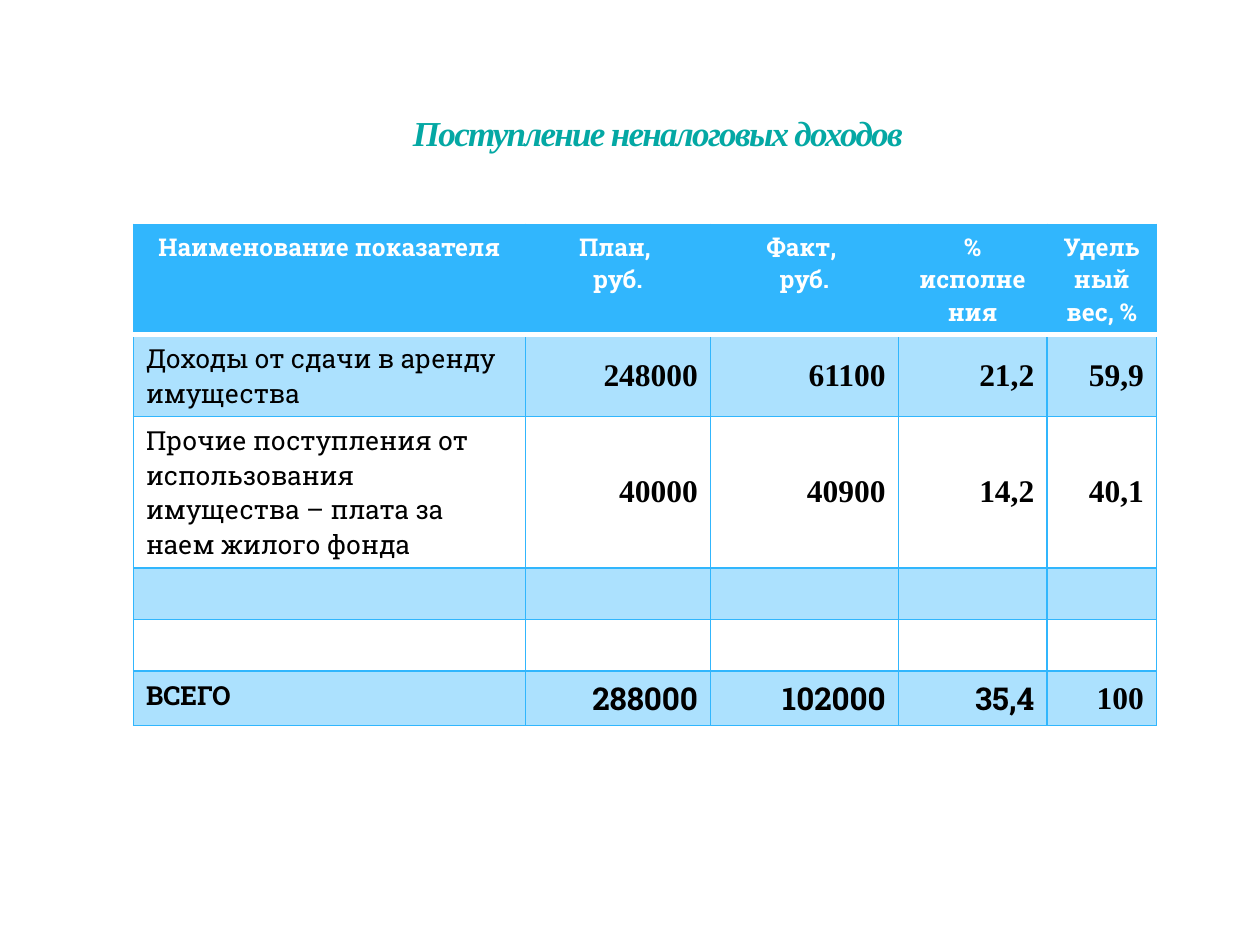
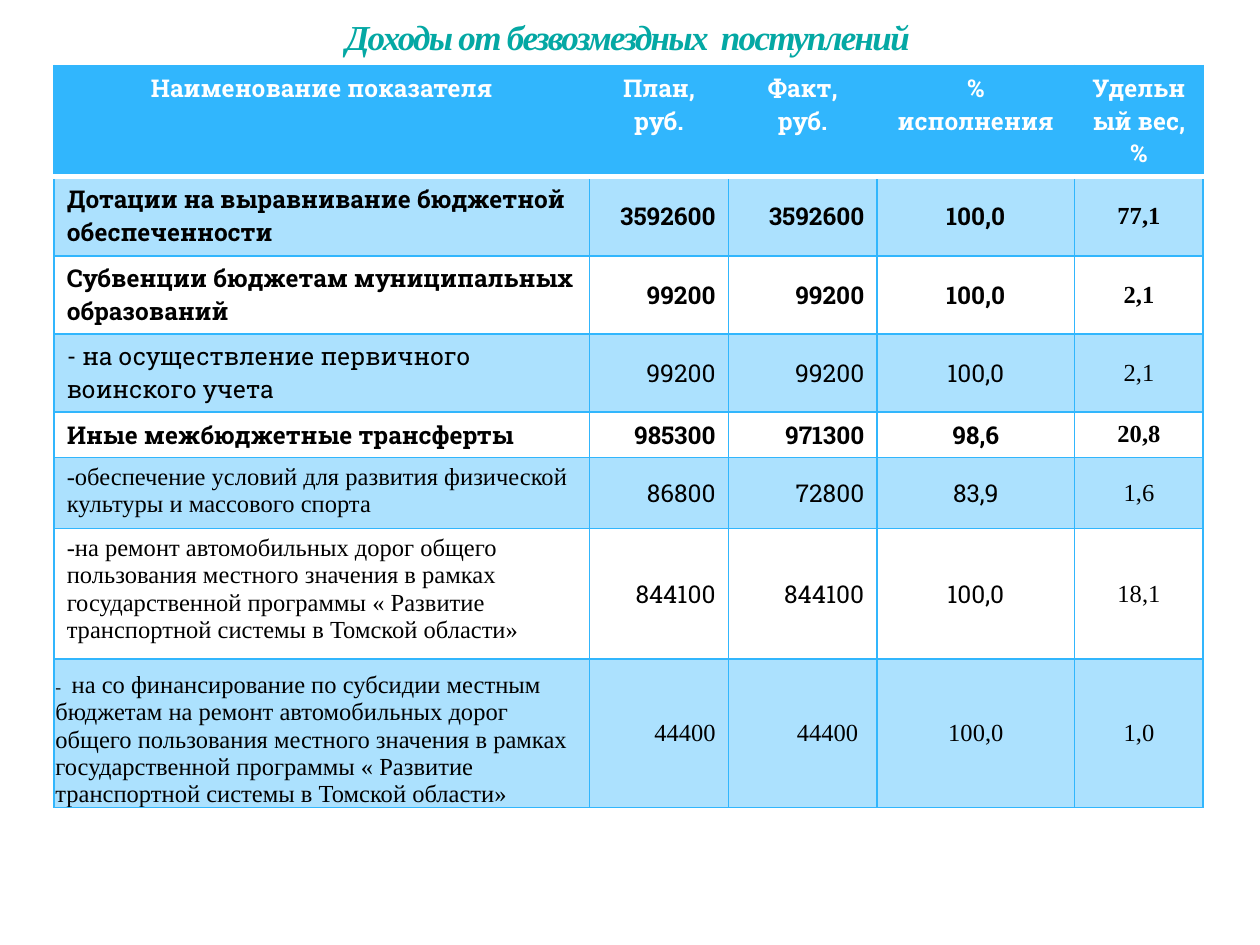
from dataclasses import dataclass

from lxml import etree
from pptx import Presentation
from pptx.dml.color import RGBColor
from pptx.enum.text import MSO_ANCHOR, PP_ALIGN
from pptx.oxml.ns import qn
from pptx.util import Inches, Pt

LEFT, CENTER, RIGHT = PP_ALIGN.LEFT, PP_ALIGN.CENTER, PP_ALIGN.RIGHT
TOP, MIDDLE, BOTTOM = MSO_ANCHOR.TOP, MSO_ANCHOR.MIDDLE, MSO_ANCHOR.BOTTOM

COLORS = {
    "title": "04A8A4",
    "title_outline": "AFCCDE",
    "table": "31B6FD",
    "white": "FFFFFF",
    "text": "000000",
}
SLAB, TIMES = "Roboto Slab", "Times New Roman"
BAND_OPACITY = 40
HEADER_FORMAT = {"name": SLAB, "size": Pt(14), "bold": True}
TITLE_FORMAT = {"name": TIMES, "size": Pt(20), "bold": True, "italic": True}


@dataclass
class Box:
    left: float
    top: float
    width: float
    height: float

    def lengths(self):
        return [Inches(n) for n in (self.left, self.top, self.width, self.height)]


@dataclass
class Row:
    label: str = ""
    values: tuple = ("", "", "", "")
    label_font: str = SLAB
    number_font: str = SLAB
    share_font: str = TIMES
    label_bold: bool = False
    number_bold: bool = False
    number_anchor: int = MIDDLE


@dataclass
class Layout:
    columns: list
    heights: list
    label_size: int
    number_size: int
    aligns: tuple


def add_span(para, text, style, color):
    span = para.add_run()
    span.text = text
    for name, value in style.items():
        setattr(span.font, name, value)
    span.font.color.rgb = RGBColor.from_string(COLORS[color])
    return span


def add_color(parent, color, opacity=100):
    """Append a solid fill with an opacity in percent."""
    fill = etree.SubElement(parent, qn("a:solidFill"))
    tone = etree.SubElement(fill, qn("a:srgbClr"), val=COLORS[color])
    if opacity < 100:
        etree.SubElement(tone, qn("a:alpha"), val=str(opacity * 1000))


def add_title(page, box, text):
    frame = page.shapes.add_textbox(*box.lengths()).text_frame
    frame.word_wrap = True
    frame.vertical_anchor = MIDDLE
    para = frame.paragraphs[0]
    para.alignment = CENTER
    span = add_span(para, text, TITLE_FORMAT, "title")
    properties = span.font._element
    properties.set("spc", "-100")
    outline = etree.Element(qn("a:ln"), w=str(Pt(0.25)))
    add_color(outline, "title_outline", 25)
    properties.insert(0, outline)


def set_borders(cell, row_index):
    """Blue grid lines, with a thick white line under the header."""
    properties = cell._tc.get_or_add_tcPr()
    white_side = {0: "B", 1: "T"}.get(row_index)
    for side in "LRTB":
        color, width = ("white", 3) if side == white_side else ("table", 1)
        line = etree.SubElement(properties, qn(f"a:ln{side}"), w=str(Pt(width)))
        add_color(line, color)


def set_fill(cell, row_index):
    if row_index and row_index % 2 == 0:
        cell.fill.background()
    else:
        add_color(cell._tc.get_or_add_tcPr(), "table", BAND_OPACITY if row_index else 100)


def write_cell(cell, text, style, color="text", align=LEFT, anchor=TOP):
    cell.vertical_anchor = anchor
    for index, line in enumerate(text.split("\n")):
        frame = cell.text_frame
        para = frame.add_paragraph() if index else frame.paragraphs[0]
        para.alignment = align
        if line:
            add_span(para, line, style, color)


def write_row(cells, row, layout):
    label_style = {"name": row.label_font, "size": Pt(layout.label_size), "bold": row.label_bold}
    write_cell(cells[0], row.label, label_style)
    fonts = [row.number_font] * 3 + [row.share_font]
    for cell, text, font, align in zip(cells[1:], row.values, fonts, layout.aligns):
        style = {"name": font, "size": Pt(layout.number_size), "bold": row.number_bold}
        anchor = row.number_anchor if align == RIGHT else MIDDLE
        write_cell(cell, text, style, align=align, anchor=anchor)


def add_income_table(page, box, layout, headers, rows):
    frame = page.shapes.add_table(len(rows) + 1, len(headers), *box.lengths())
    table = frame.table
    for column, width in zip(table.columns, layout.columns):
        column.width = Inches(width)
    for index, height in enumerate(layout.heights):
        table.rows[index].height = Inches(height)
        cells = list(table.rows[index].cells)
        for cell in cells:
            set_borders(cell, index)
            set_fill(cell, index)
        if index:
            write_row(cells, rows[index - 1], layout)
        else:
            for cell, text in zip(cells, headers):
                write_cell(cell, text, HEADER_FORMAT, "white", CENTER)
    return table


def build_non_tax_page(page):
    layout = Layout(
        columns=[3.11, 1.47, 1.49, 1.18, 0.87],
        heights=[0.87, 0.65, 1.2, 0.41, 0.41, 0.43],
        label_size=15, number_size=18, aligns=(RIGHT,) * 4,
    )
    headers = ["Наименование показателя", "План, \nруб.", "Факт, \nруб.",
               "% исполнения", "Удельный вес, %"]
    rows = [
        Row("Доходы от сдачи в аренду имущества", ("248000", "61100", "21,2", "59,9"),
            number_font=TIMES, number_bold=True),
        Row("Прочие поступления от использования имущества – плата за наем жилого фонда",
            ("40000", "40900", "14,2", "40,1"), number_font=TIMES, number_bold=True),
        Row(),
        Row(),
        Row("ВСЕГО", ("288000", "102000", "35,4", "100"), label_bold=True, number_bold=True),
    ]
    add_income_table(page, Box(1.06, 1.78, 8.12, 3.97), layout, headers, rows)
    add_title(page, Box(1.38, 0.68, 7.68, 0.74), "Поступление неналоговых доходов")


def build_transfers_page(page):
    layout = Layout(
        columns=[4.25, 1.1, 1.18, 1.57, 1.02],
        heights=[0.88, 0.63, 0.62, 0.62, 0.36, 0.55, 0.96, 1.08],
        label_size=14, number_size=14, aligns=(RIGHT, RIGHT, CENTER, CENTER),
    )
    headers = ["Наименование показателя", "План, руб.", "Факт, руб.",
               "% исполнения", "Удельный вес, %"]
    road_program = ("местного значения в рамках государственной программы "
                    "« Развитие транспортной системы в Томской области»")
    bold = {"label_bold": True, "number_bold": True}
    rows = [
        Row("Дотации на выравнивание бюджетной обеспеченности",
            ("3592600", "3592600", "100,0", "77,1"), **bold),
        Row("Субвенции бюджетам муниципальных образований",
            ("99200", "99200", "100,0", "2,1"), **bold),
        Row("- на осуществление первичного воинского учета",
            ("99200", "99200", "100,0", "2,1")),
        Row("Иные межбюджетные трансферты", ("985300", "971300", "98,6", "20,8"),
            number_anchor=TOP, **bold),
        Row("-обеспечение условий для развития физической культуры и массового спорта",
            ("86800", "72800", "83,9", "1,6"), label_font=TIMES),
        Row(f"-на ремонт автомобильных дорог общего пользования {road_program}",
            ("844100", "844100", "100,0", "18,1"), label_font=TIMES),
        Row("", ("44400", "44400 ", "100,0", "1,0"), number_font=TIMES),
    ]
    table = add_income_table(page, Box(0.43, 0.52, 9.13, 5.7), layout, headers, rows)

    cofinancing = table.cell(len(rows), 0)
    cofinancing.vertical_anchor = BOTTOM
    margins = {"margin_left": 0.01, "margin_top": 0.01, "margin_right": 0.01, "margin_bottom": 0}
    for name, value in margins.items():
        setattr(cofinancing, name, Inches(value))
    para = cofinancing.text_frame.paragraphs[0]
    for text, size in (
        ("- ", 10),
        (" на со финансирование по субсидии местным бюджетам на ремонт "
         f"автомобильных дорог общего пользования {road_program}", 14),
    ):
        add_span(para, text, {"name": TIMES, "size": Pt(size), "bold": False}, "text")

    add_title(page, Box(1.14, 0, 7.68, 0.58), "Доходы от безвозмездных  поступлений")


def main():
    deck = Presentation()
    deck.slide_width, deck.slide_height = Inches(10), Inches(7.5)
    blank = deck.slide_layouts[6]
    for build_page in (build_non_tax_page, build_transfers_page):
        build_page(deck.slides.add_slide(blank))
    deck.save("out.pptx")


if __name__ == "__main__":
    main()
